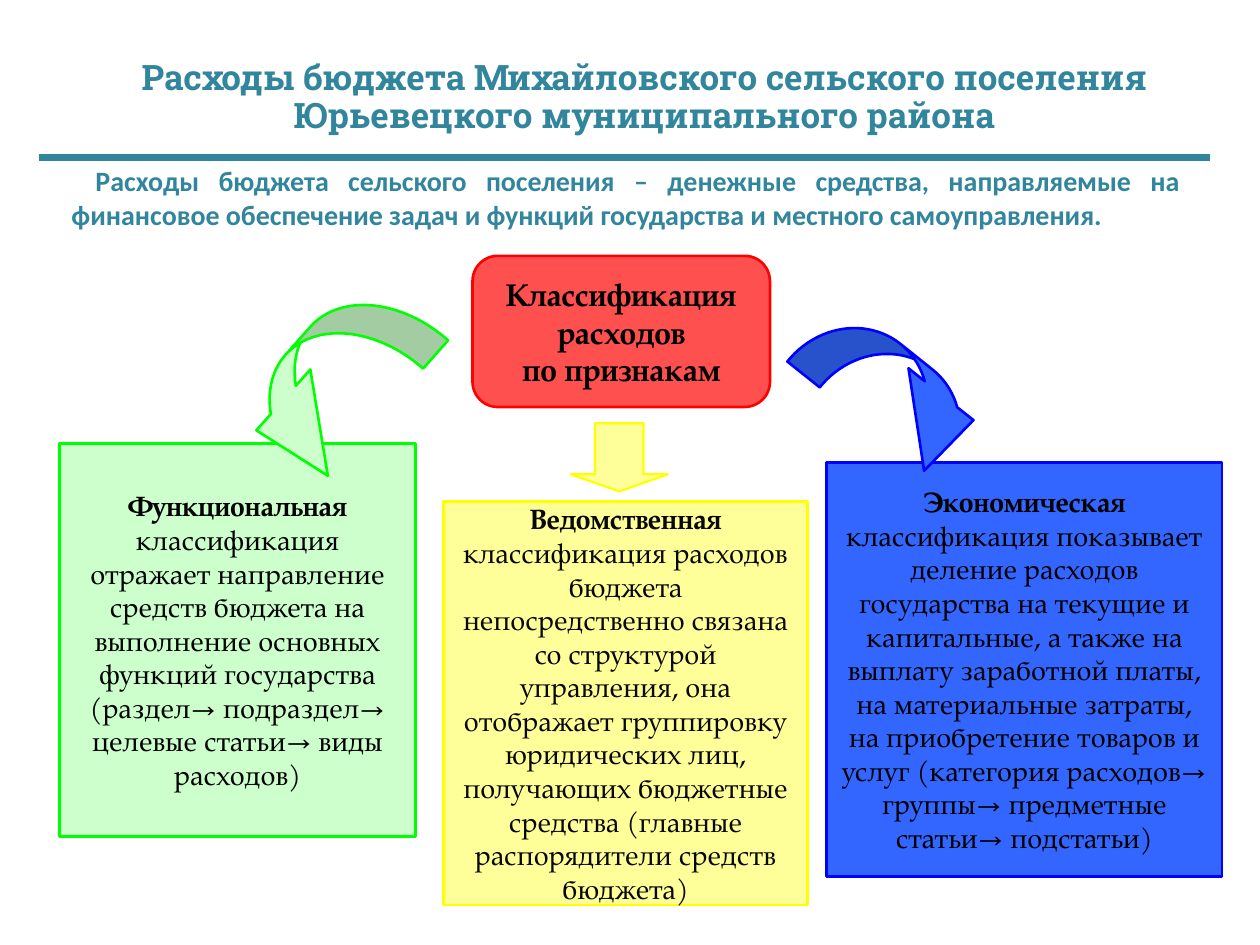
from lxml.etree import SubElement
from pptx import Presentation
from pptx.dml.color import RGBColor
from pptx.enum.shapes import MSO_CONNECTOR, MSO_SHAPE
from pptx.enum.text import MSO_ANCHOR, PP_ALIGN
from pptx.oxml.ns import qn
from pptx.util import Pt

COLORS = {
    "teal": "31859C", "black": "000000", "ink": "080808",
    "red": "FF5050", "red_line": "FF0000",
    "green": "CCFFCC", "green_line": "00FF00",
    "yellow": "FFFF99", "yellow_line": "FFFF00",
    "blue": "3366FF", "blue_line": "0000FF",
}
SERIF = "TeX Gyre Pagella"

# (box, colour, text colour, bold lead, rest)
CLASSES = [
    ((34, 253.5, 203.5, 224.5), "green", "black", "Функциональная",
     " классификация отражает направление средств бюджета на выполнение основных "
     "функций государства (раздел→ подраздел→ целевые статьи→ виды расходов)"),
    ((253.5, 286.7, 208, 230.5), "yellow", "ink", "Ведомственная ",
     "классификация расходов бюджета непосредственно связана со структурой "
     "управления, она отображает группировку юридических лиц, получающих бюджетные "
     "средства (главные распорядители средств бюджета)"),
    ((472.4, 264.3, 226, 236.5), "blue", "black", "Экономическая",
     " классификация показывает деление расходов государства на текущие и "
     "капитальные, а также на выплату заработной платы, на материальные затраты, "
     "на приобретение товаров и услуг (категория расходов→ группы→ предметные "
     "статьи→ подстатьи)"),
]

# (preset, box, rotation, adjustments, colour, line width)
ARROWS = [
    (MSO_SHAPE.CURVED_UP_ARROW, (126.7, 188.6, 126.7, 64), 131.6,
     (0.337, 0.726, 0.747), "green", 1.5),
    (MSO_SHAPE.CURVED_DOWN_ARROW, (451.4, 202.3, 123.8, 48.2), 38.6,
     (0.492, 0.986, 0.834), "blue", 1.5),
    (MSO_SHAPE.DOWN_ARROW, (326.2, 241.9, 55.4, 38.9), 0,
     (0.5, 0.25), "yellow", 1.25),
]


def rgb(name):
    return RGBColor.from_string(COLORS[name])


def pts(box):
    return [Pt(v) for v in box]


def write(s, paragraphs, font=SERIF, size=16, color="black", align=PP_ALIGN.CENTER,
          anchor=MSO_ANCHOR.MIDDLE, inset=(7.2, 3.6), spacing=None, indent=0):
    """Fill a shape with paragraphs, each a list of (text, bold) runs."""
    tf = s.text_frame
    tf.word_wrap = True
    tf.vertical_anchor = anchor
    tf.margin_left = tf.margin_right = Pt(inset[0])
    tf.margin_top = tf.margin_bottom = Pt(inset[1])
    for i, runs in enumerate(paragraphs):
        p = tf.add_paragraph() if i else tf.paragraphs[0]
        p.alignment = align
        p.line_spacing = spacing
        if indent:
            p._p.get_or_add_pPr().set("indent", str(Pt(indent)))
        for text, bold in runs:
            r = p.add_run()
            r.text = text
            r.font.name, r.font.size, r.font.bold = font, Pt(size), bold
            r.font.color.rgb = rgb(color)


def add_block(slide, preset, box, color, width=1.5, adjustments=()):
    s = slide.shapes.add_shape(preset, *pts(box))
    s.shadow.inherit = False
    s.fill.solid()
    s.fill.fore_color.rgb = rgb(color)
    s.line.color.rgb = rgb(color + "_line")
    s.line.width = Pt(width)
    for i, value in enumerate(adjustments):
        s.adjustments[i] = value
    return s


def add_header(slide, box):
    """Title, rule and definition, stacked inside the box."""
    x, y, w, h = box
    title = slide.shapes.add_textbox(*pts((x + 11.5, y, w, 44)))
    write(title, [[("Расходы бюджета Михайловского сельского поселения "
                    "Юрьевецкого муниципального района", True)]],
          font="Roboto Slab", size=20, color="teal", spacing=0.9)
    definition = slide.shapes.add_textbox(*pts((x + 11.5, y + 56, 648, h - 56)))
    write(definition, [[("Расходы бюджета сельского поселения – денежные средства, "
                         "направляемые на финансовое обеспечение задач и функций "
                         "государства и местного самоуправления.", True)]],
          font="Calibri", color="teal", align=PP_ALIGN.JUSTIFY,
          anchor=MSO_ANCHOR.TOP, indent=13.7)
    rule = slide.shapes.add_connector(
        MSO_CONNECTOR.STRAIGHT, *pts((x, y + 56, x + w, y + 56)))
    rule.line.color.rgb = rgb("teal")
    rule.line.width = Pt(3.75)
    SubElement(rule._element.spPr, qn("a:effectLst"))


def add_root(slide, box):
    s = add_block(slide, MSO_SHAPE.ROUNDED_RECTANGLE, box, "red", adjustments=[0.167])
    write(s, [[("Классификация расходов", True)], [("по признакам", True)]],
          size=18, inset=(10, 3.6))


def add_class(slide, box, color, ink, lead, rest):
    s = add_block(slide, MSO_SHAPE.RECTANGLE, box, color)
    write(s, [[(lead, True), (rest, False)]], color=ink, inset=(8.6, 0))


def add_arrow(slide, preset, box, rotation, adjustments, color, width):
    s = add_block(slide, preset, box, color, width, adjustments)
    s.rotation = rotation


def main():
    prs = Presentation()
    prs.slide_width, prs.slide_height = Pt(720), Pt(540)
    slide = prs.slides.add_slide(prs.slide_layouts[6])
    add_header(slide, (22.3, 34, 669, 107))
    add_root(slide, (270, 146.2, 170, 86.4))
    for item in CLASSES:
        add_class(slide, *item)
    for item in ARROWS:
        add_arrow(slide, *item)
    prs.save("out.pptx")


if __name__ == "__main__":
    main()
